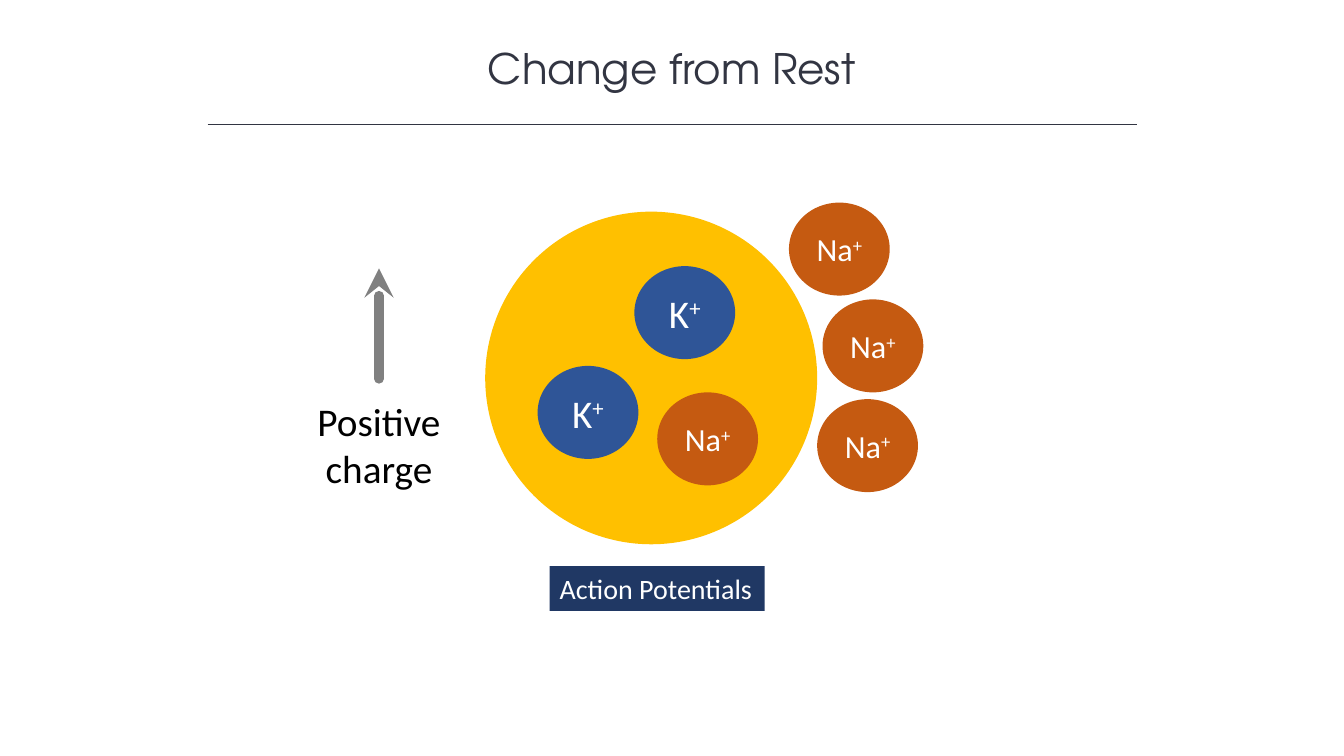
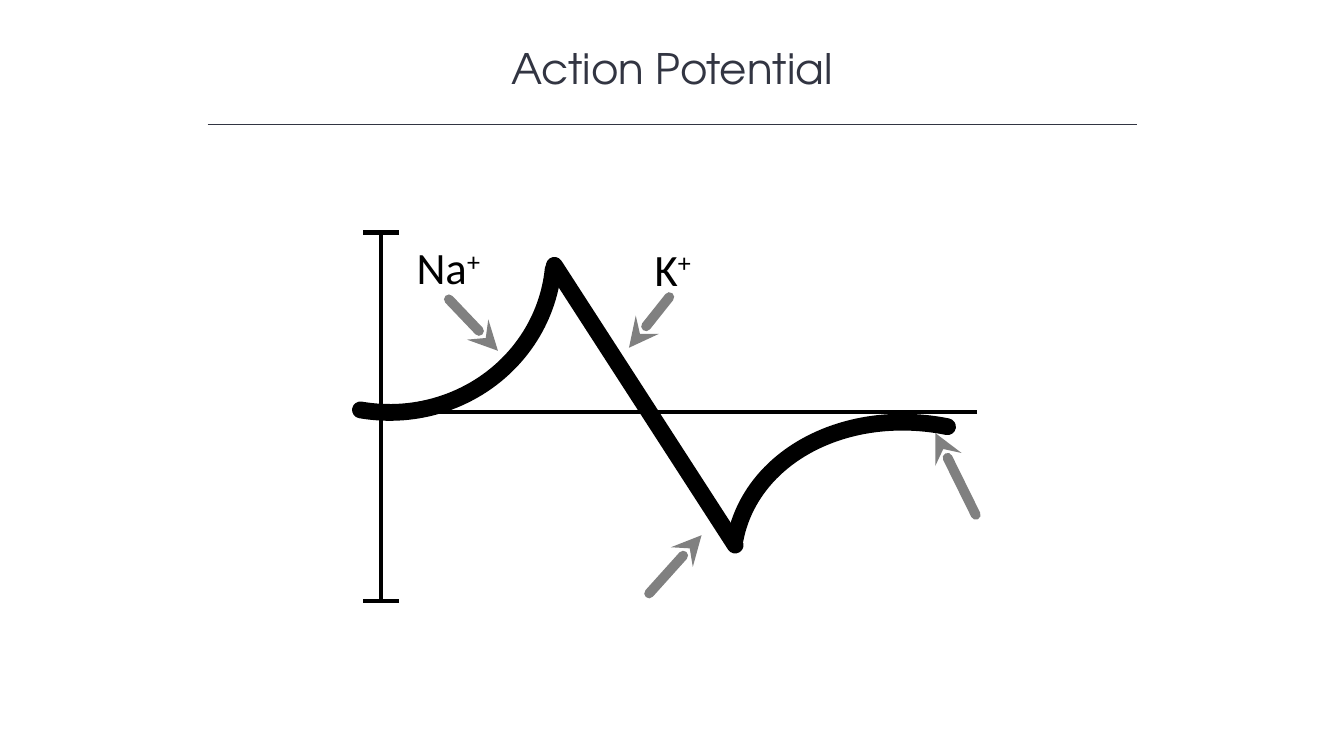
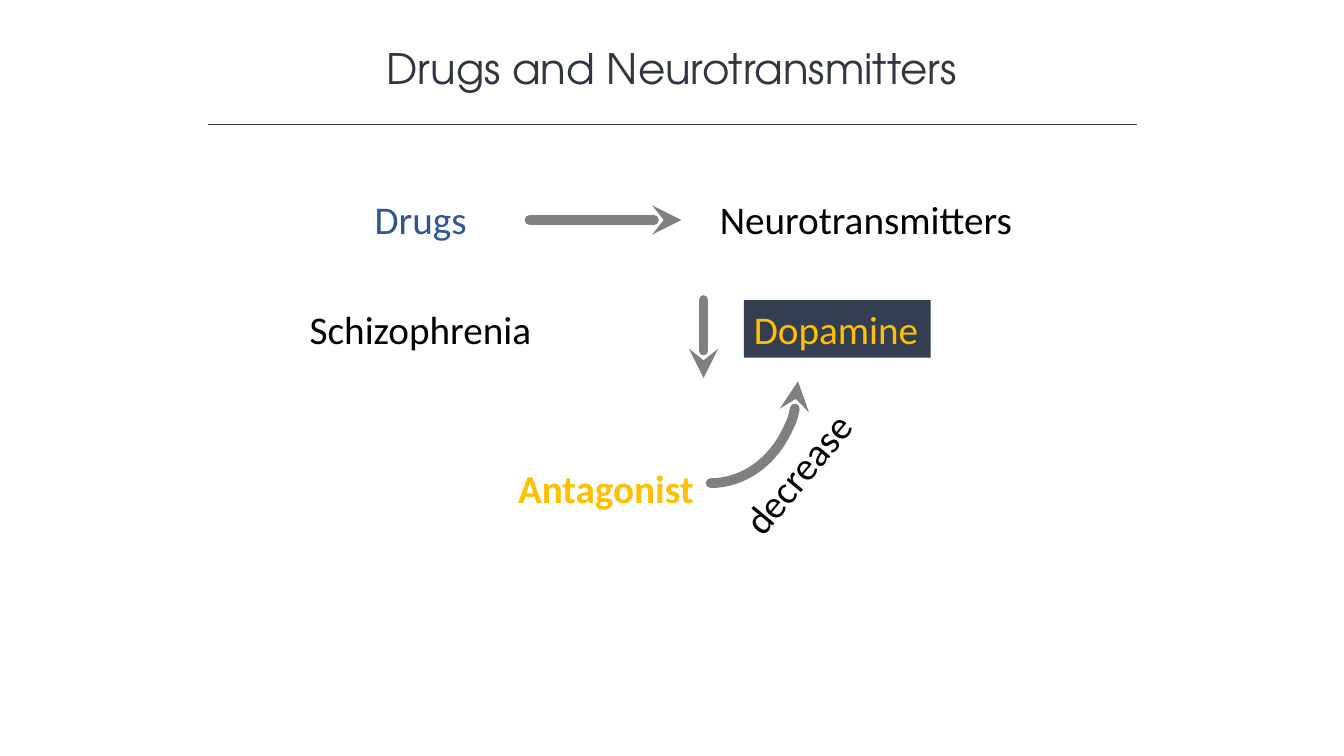
from dataclasses import dataclass

import lxml.etree
import pptx
import pptx.dml.color
import pptx.enum.shapes
import pptx.enum.text
import pptx.oxml.ns
import pptx.util

COLORS = {
    "title": "323542", "black": "000000", "white": "FFFFFF", "gray": "808080",
    "yellow": "FFC000", "blue": "2F5597", "orange": "C55A11",
    "navy": "203864", "slate": "333F50",
}
TITLE_FONT = "TeX Gyre Adventor"
BODY_FONT = "Calibri"
SLIDE_WIDTH = pptx.util.Inches(13.33)
SLIDE_HEIGHT = pptx.util.Inches(7.5)
ION_WIDTH, ION_HEIGHT = 7.5, 12.3
LABEL_HEIGHT = 7.6
TITLE_ONLY = 5
SHAPES = pptx.enum.shapes.MSO_SHAPE
ALIGN = pptx.enum.text.PP_ALIGN
ANCHOR = pptx.enum.text.MSO_ANCHOR


@dataclass(frozen=True)
class Box:
    """Left, top, width and height in percent of the slide."""
    left: float
    top: float
    width: float
    height: float

    def lengths(self) -> tuple[int, int, int, int]:
        return across(self.left), down(self.top), across(self.width), down(self.height)


@dataclass(frozen=True)
class Label:
    text: str
    box: Box
    color: str = "black"
    size: float = 28
    superscript: str = ""
    fill: str = ""
    bold: bool = False
    rotation: float = 0


@dataclass(frozen=True)
class Ion:
    symbol: str
    left: float
    top: float
    color: str
    size: float


@dataclass(frozen=True)
class Stroke:
    color: str
    width: float
    cap: str = "flat"
    arrow: str = ""


@dataclass(frozen=True)
class Line:
    start: tuple[float, float]
    end: tuple[float, float]
    stroke: Stroke


@dataclass(frozen=True)
class Arc:
    box: Box
    rotation: float
    stroke: Stroke
    adjustments: tuple[float, float] = (162, 0)
    flipped: bool = False


RULE = Stroke("title", 1)
ARROW = Stroke("gray", 7, "rnd", "tailEnd")
ARC_ARROW = Stroke("gray", 7, "rnd", "headEnd")
AXIS = Stroke("black", 3.5)
CURVE = Stroke("black", 12, "rnd")


def across(share: float) -> int:
    return round(SLIDE_WIDTH * share / 100)


def down(share: float) -> int:
    return round(SLIDE_HEIGHT * share / 100)


def rgb(name: str) -> pptx.dml.color.RGBColor:
    return pptx.dml.color.RGBColor.from_string(COLORS[name])


def add_run(paragraph, text: str, font: str, size: float, color: str,
            bold: bool = False, raised: bool = False) -> None:
    run = paragraph.add_run()
    run.text = text
    run.font.name = font
    run.font.size = pptx.util.Pt(size)
    run.font.bold = bold
    run.font.color.rgb = rgb(color)
    if raised:
        run._r.get_or_add_rPr().set("baseline", "30000")


def apply_stroke(shape, stroke: Stroke) -> None:
    shape.line.color.rgb = rgb(stroke.color)
    shape.line.width = pptx.util.Pt(stroke.width)
    line = shape.line._get_or_add_ln()
    line.set("cap", stroke.cap)
    if stroke.arrow:
        lxml.etree.SubElement(line, pptx.oxml.ns.qn("a:" + stroke.arrow), type="stealth")


def add_line(slide, line: Line) -> None:
    connector = slide.shapes.add_connector(
        pptx.enum.shapes.MSO_CONNECTOR.STRAIGHT,
        across(line.start[0]), down(line.start[1]),
        across(line.end[0]), down(line.end[1]))
    apply_stroke(connector, line.stroke)
    lxml.etree.SubElement(connector._element.spPr, pptx.oxml.ns.qn("a:effectLst"))


def add_arc(slide, arc: Arc) -> None:
    shape = slide.shapes.add_shape(SHAPES.ARC, *arc.box.lengths())
    shape.shadow.inherit = False
    shape.fill.background()
    for index, value in enumerate(arc.adjustments):
        shape.adjustments[index] = value
    shape.rotation = arc.rotation
    if arc.flipped:
        shape._element.spPr.xfrm.set("flipV", "1")
    apply_stroke(shape, arc.stroke)


def add_filled(slide, kind, box: Box, color: str):
    shape = slide.shapes.add_shape(kind, *box.lengths())
    shape.shadow.inherit = False
    shape.fill.solid()
    shape.fill.fore_color.rgb = rgb(color)
    shape.line.fill.background()
    return shape


def add_label(slide, label: Label) -> None:
    if label.fill:
        shape = add_filled(slide, SHAPES.RECTANGLE, label.box, label.fill)
        shape.text_frame.margin_right = 0
    else:
        shape = slide.shapes.add_textbox(*label.box.lengths())
    shape.rotation = label.rotation
    frame = shape.text_frame
    frame.word_wrap = True
    frame.vertical_anchor = ANCHOR.TOP
    paragraph = frame.paragraphs[0]
    paragraph.alignment = ALIGN.LEFT if label.fill else ALIGN.CENTER
    add_run(paragraph, label.text, BODY_FONT, label.size, label.color, label.bold)
    if label.superscript:
        add_run(paragraph, label.superscript, BODY_FONT, label.size, label.color, raised=True)


def add_ion(slide, ion: Ion) -> None:
    box = Box(ion.left, ion.top, ION_WIDTH, ION_HEIGHT)
    shape = add_filled(slide, SHAPES.OVAL, box, ion.color)
    frame = shape.text_frame
    frame.margin_left = frame.margin_right = 0
    frame.vertical_anchor = ANCHOR.MIDDLE
    paragraph = frame.paragraphs[0]
    paragraph.alignment = ALIGN.CENTER
    add_run(paragraph, ion.symbol, BODY_FONT, ion.size, "white")
    add_run(paragraph, "+", BODY_FONT, ion.size, "white", raised=True)


def add_titled_slide(presentation, text: str):
    slide = presentation.slides.add_slide(presentation.slide_layouts[TITLE_ONLY])
    title = slide.shapes.title
    title.left, title.top, title.width, title.height = Box(12.5, 4.9, 75, 8.1).lengths()
    title.text_frame.vertical_anchor = ANCHOR.MIDDLE
    paragraph = title.text_frame.paragraphs[0]
    paragraph.alignment = ALIGN.CENTER
    add_run(paragraph, text, TITLE_FONT, 30, "title")
    add_line(slide, Line((15.45, 16.5), (84.6, 16.5), RULE))
    return slide


def build_change_from_rest(presentation) -> None:
    slide = add_titled_slide(presentation, "Change from Rest")
    add_filled(slide, SHAPES.OVAL, Box(36.1, 28, 24.7, 44), "yellow")
    for left, top in ((40, 48.4), (47.2, 35.2)):
        add_ion(slide, Ion("K", left, top, "blue", 28))
    for left, top in ((58.7, 26.8), (61.2, 39.6), (60.8, 52.8), (48.9, 51.9)):
        add_ion(slide, Ion("Na", left, top, "orange", 23))
    add_line(slide, Line((28.2, 50.1), (28.2, 35.5), ARROW))
    add_label(slide, Label("Positive charge", Box(22.7, 51.9, 11, 13.9)))
    add_label(slide, Label("Action Potentials", Box(40.9, 74.9, 16, 5.9),
                           "white", 20, fill="navy"))


def build_action_potential(presentation) -> None:
    slide = add_titled_slide(presentation, "Action Potential")
    add_label(slide, Label("K", Box(47.5, 31.3, 5.1, 8.5), size=32, superscript="+"))
    add_label(slide, Label("Na", Box(30.1, 31.1, 6.5, 8.5), size=32, superscript="+"))
    for start, end in (
        ((33.4, 39.6), (37.05, 46.4)),
        ((48.3, 78.5), (52.2, 70.8)),
        ((72.6, 68.1), (69.6, 57.3)),
        ((49.8, 39.3), (46.8, 46)),
    ):
        add_line(slide, Line(start, end, ARROW))
    axis_left, axis_top, axis_bottom = 28.35, 30.7, 79.5
    add_line(slide, Line((axis_left, axis_top), (axis_left, axis_bottom), AXIS))
    add_line(slide, Line((72.7, 54.5), (axis_left, 54.5), AXIS))
    for cap_top in (axis_top, axis_bottom):
        add_line(slide, Line((29.7, cap_top), (27, cap_top), AXIS))
    add_arc(slide, Arc(Box(17.1, 11.7, 23.7, 43.6), 93, CURVE, (163.5, 4.42)))
    add_line(slide, Line((41.25, 35.1), (54.7, 72.1), CURVE))
    add_arc(slide, Arc(Box(54.4, 56.1, 28, 40.5), 193.1, CURVE, (163.5, 1.04), True))


def build_drugs(presentation) -> None:
    slide = add_titled_slide(presentation, "Drugs and Neurotransmitters")
    first_row, second_row, third_row = 25.2, 39.7, 60.7
    narrow, wide = 12.8, 24.15
    for label in (
        Label("Drugs", Box(24.9, first_row, narrow, LABEL_HEIGHT), "blue"),
        Label("Neurotransmitters", Box(52.35, first_row, wide, LABEL_HEIGHT)),
        Label("Schizophrenia", Box(19.2, second_row, wide, LABEL_HEIGHT)),
        Label("Dopamine", Box(55.35, second_row, 13.9, LABEL_HEIGHT),
              "yellow", fill="slate"),
        Label("Antagonist", Box(33, third_row, wide, LABEL_HEIGHT), "yellow", bold=True),
        Label("decrease", Box(52.9, 58.8, narrow, LABEL_HEIGHT), rotation=309.9),
    ):
        add_label(slide, label)
    add_line(slide, Line((39.4, 29.1), (50.7, 29.1), ARROW))
    add_line(slide, Line((52.35, second_row), (52.35, 50), ARROW))
    add_arc(slide, Arc(Box(45.3, 38.9, 15.15, 23.1), 90, ARC_ARROW))


def main() -> None:
    presentation = pptx.Presentation()
    presentation.slide_width = SLIDE_WIDTH
    presentation.slide_height = SLIDE_HEIGHT
    build_change_from_rest(presentation)
    build_action_potential(presentation)
    build_drugs(presentation)
    presentation.save("out.pptx")


if __name__ == "__main__":
    main()
